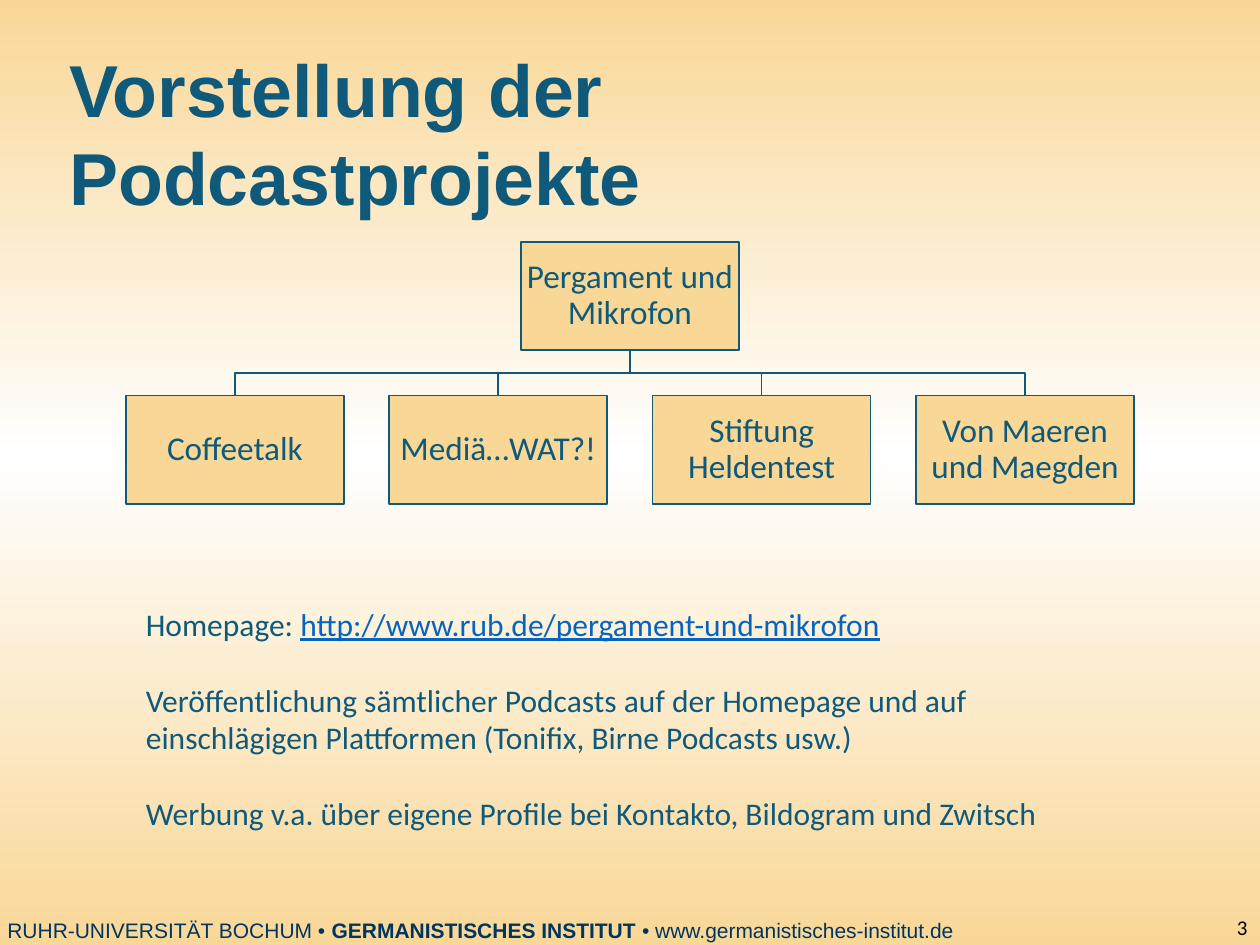
import copy

from pptx import Presentation
from pptx import util as u
from pptx.dml.color import RGBColor
from pptx.enum import shapes, text

WIDTH, HEIGHT = 10, 7.5
PETROL, SAND, NAVY, LINK_BLUE = "0F5A7A", "F9D797", "003560", "0563C1"

# Organisation chart: four columns centred on the slide
BOX_WIDTH, BOX_HEIGHT = 1.73, 0.86
COLUMN_STEP = 2.09
ROOT_TOP, CHILD_TOP = 1.92, 3.14
ROOT = "Pergament und Mikrofon"
PODCASTS = ["Coffeetalk", "Mediä…WAT?!", "Stiftung Heldentest",
            "Von Maeren und Maegden"]


def color(hex_string):
    return RGBColor.from_string(hex_string)


def style(font, size, hex_string, name="Calibri", bold=None):
    font.size, font.name, font.bold = u.Pt(size), name, bold
    font.color.rgb = color(hex_string)


def set_background(page):
    fill = page.background.fill
    fill.gradient()
    fill.gradient_angle = 270
    # A third stop in the middle turns the fade into a white band
    first = fill.gradient_stops[0]._gs
    first.addnext(copy.deepcopy(first))
    stops = [(0, SAND), (0.48, "FFFFFF"), (1, SAND)]
    for stop, (position, hex_string) in zip(fill.gradient_stops, stops):
        stop.position = position
        stop.color.rgb = color(hex_string)


def add_text(page, left, top, width, height):
    box = page.shapes.add_textbox(*map(u.Inches, (left, top, width, height)))
    box.text_frame.word_wrap = True
    return box.text_frame


def add_spans(para, spans):
    for words in spans:
        para.add_run().text = words
    return para.runs


def set_title(page, words):
    title = page.shapes.title
    title.left, title.top = u.Inches(0.45), u.Inches(0.36)
    title.width, title.height = u.Inches(9.09), u.Inches(1.38)
    title.text_frame.text = words
    title.text_frame.vertical_anchor = text.MSO_ANCHOR.MIDDLE
    para = title.text_frame.paragraphs[0]
    para.alignment = text.PP_ALIGN.LEFT
    style(para.font, 42, PETROL, "Arial", True)


def add_node(page, center, top, words):
    node = page.shapes.add_shape(
        shapes.MSO_SHAPE.RECTANGLE, u.Inches(center - BOX_WIDTH / 2),
        u.Inches(top), u.Inches(BOX_WIDTH), u.Inches(BOX_HEIGHT))
    node.shadow.inherit = False
    node.fill.solid()
    node.fill.fore_color.rgb = color(SAND)
    node.line.color.rgb = color(PETROL)
    node.line.width = u.Pt(1)
    frame = node.text_frame
    frame.word_wrap = True
    frame.vertical_anchor = text.MSO_ANCHOR.MIDDLE
    frame.margin_left = frame.margin_right = u.Inches(0.01)
    frame.margin_top = frame.margin_bottom = u.Inches(0.01)
    para = frame.paragraphs[0]
    para.text = words
    para.alignment = text.PP_ALIGN.CENTER
    para.line_spacing = 0.9
    style(para.font, 19, PETROL)


def add_branch(page, start, end):
    """Draw a stepped line that bends halfway down."""
    (x1, y1), (x2, y2) = start, end
    middle = (y1 + y2) / 2
    corners = [(u.Inches(x), u.Inches(y))
               for x, y in [(x1, y1), (x1, middle), (x2, middle), (x2, y2)]]
    builder = page.shapes.build_freeform(*corners[0])
    builder.add_line_segments(corners[1:], close=False)
    branch = builder.convert_to_shape()
    branch.shadow.inherit = False
    branch.fill.background()
    branch.line.color.rgb = color(PETROL)
    branch.line.width = u.Pt(1)


def add_chart_tree(page):
    middle = WIDTH / 2
    centers = [middle + (column - (len(PODCASTS) - 1) / 2) * COLUMN_STEP
               for column in range(len(PODCASTS))]
    for center in centers:
        add_branch(page, (middle, ROOT_TOP + BOX_HEIGHT), (center, CHILD_TOP))
    add_node(page, middle, ROOT_TOP, ROOT)
    for center, words in zip(centers, PODCASTS):
        add_node(page, center, CHILD_TOP, words)


def add_project_details(page):
    frame = add_text(page, 1.06, 4.75, 7.87, 1.92)
    paragraphs = [
        ["Homepage: ", "http://www.rub.de/pergament-und-mikrofon"],
        ["Veröffentlichung sämtlicher Podcasts auf der Homepage und auf "
         "einschlägigen Plattformen (Tonifix, Birne Podcasts usw.)"],
        ["Werbung v.a. über eigene Profile bei Kontakto, Bildogram "
         "und Zwitsch"],
    ]
    for index, spans in enumerate(paragraphs):
        para = frame.add_paragraph() if index else frame.paragraphs[0]
        if index:
            para.space_before = u.Pt(21.8)
        style(para.font, 18, PETROL)
        add_spans(para, spans)
    address = frame.paragraphs[0].runs[1]
    address.font.underline = True
    address.font.color.rgb = color(LINK_BLUE)


def add_footer(page):
    para = add_text(page, -0.04, 7.23, 8.51, 0.3).paragraphs[0]
    style(para.font, 12, NAVY, "Arial")
    spans = add_spans(para, ["RUHR-UNIVERSITÄT BOCHUM • ",
                             "GERMANISTISCHES INSTITUT ",
                             "• www.germanistisches-institut.de"])
    spans[1].font.bold = True

    # Page number
    para = add_text(page, 7.43, 7.21, 2.57, 0.29).paragraphs[0]
    para.text = "3"
    para.alignment = text.PP_ALIGN.RIGHT
    style(para.font, 12, "000000")


def main():
    deck = Presentation()
    deck.slide_width, deck.slide_height = u.Inches(WIDTH), u.Inches(HEIGHT)
    page = deck.slides.add_slide(deck.slide_layouts[5])
    set_background(page)
    set_title(page, "Vorstellung der Podcastprojekte")
    add_chart_tree(page)
    add_project_details(page)
    add_footer(page)
    deck.save("out.pptx")


if __name__ == "__main__":
    main()
